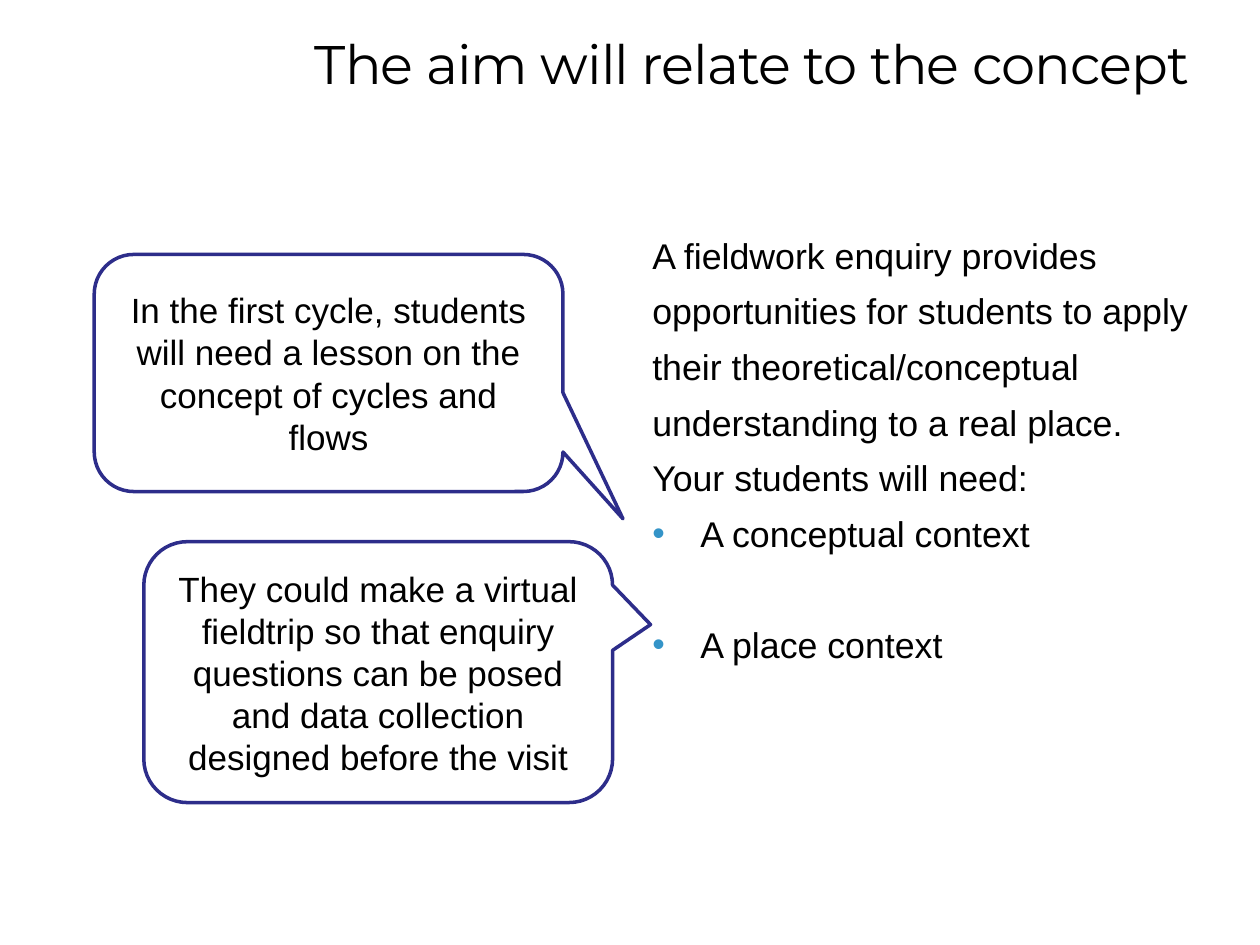
"""Build the slide on linking a fieldwork aim to its concept."""
from dataclasses import dataclass

from lxml.etree import SubElement
from pptx import Presentation
from pptx.dml.color import RGBColor
from pptx.enum.shapes import MSO_SHAPE
from pptx.enum.text import MSO_ANCHOR, PP_ALIGN
from pptx.oxml.ns import qn
from pptx.slide import Slide
from pptx.text.text import TextFrame, _Paragraph
from pptx.util import Cm, Pt

BLACK, WHITE, NAVY, BLUE = "000000", "FFFFFF", "2D2D8A", "3494C8"
TITLE_FORMAT = {"name": "Montserrat", "size": Pt(31)}
BODY_FORMAT = {"name": "Arial", "size": Pt(20.4)}
CALLOUT_FORMAT = {"name": "Arial", "size": Pt(20)}


@dataclass
class Callout:
    """A speech bubble with its position and pointer, lengths in cm."""
    text: str
    left: float
    top: float
    height: float
    pointer: tuple[float, float]
    width: float = 9.45


@dataclass
class Line:
    """A body paragraph."""
    text: str
    bullet: bool = False
    space_before: float = 0


CALLOUTS = [
    Callout("In the first cycle, students will need a lesson on the concept "
            "of cycles and flows", 1.9, 5.13, 4.78, (0.628, 0.615)),
    Callout("They could make a virtual fieldtrip so that enquiry questions can "
            "be posed and data collection designed before the visit",
            2.9, 10.92, 5.26, (0.581, -0.182)),
]
BODY = [
    Line("A fieldwork enquiry provides opportunities for students to apply "
         "their theoretical/conceptual understanding to a real place."),
    Line("Your students will need:"),
    Line("A conceptual context", bullet=True),
    Line("A place context", bullet=True, space_before=31.8),
]


def colour(value: str) -> RGBColor:
    """Turn a hex string into a colour."""
    return RGBColor.from_string(value)


def write(para: _Paragraph, text: str, formats: dict) -> None:
    """Add one formatted black span to a paragraph."""
    span = para.add_run()
    span.text = text
    for name, value in formats.items():
        setattr(span.font, name, value)
    span.font.color.rgb = colour(BLACK)


def add_bullet(para: _Paragraph) -> None:
    """Give a paragraph a hanging coloured bullet."""
    properties = para._p.get_or_add_pPr()
    indent = Cm(0.97)
    properties.set("marL", str(indent))
    properties.set("indent", str(-indent))
    tint = SubElement(properties, qn("a:buClr"))
    SubElement(tint, qn("a:srgbClr"), val=BLUE)
    SubElement(properties, qn("a:buFont"), typeface="Arial")
    SubElement(properties, qn("a:buChar"), char="•")


def add_text_box(page: Slide, left: float, top: float,
                 width: float, height: float) -> TextFrame:
    """Add a wrapping text box, lengths in cm."""
    box = page.shapes.add_textbox(Cm(left), Cm(top), Cm(width), Cm(height))
    box.text_frame.word_wrap = True
    return box.text_frame


def add_title(page: Slide) -> None:
    """Add the tightly spaced title."""
    para = add_text_box(page, 6.1, 0.74, 18.59, 1.32).paragraphs[0]
    para.line_spacing = 0.8
    write(para, "The aim will relate to the concept", TITLE_FORMAT)
    para.runs[0].font._element.set("spc", "-50")


def add_body(page: Slide) -> None:
    """Add the explanation and its bullet list."""
    frame = add_text_box(page, 12.9, 4.32, 11.66, 9.65)
    for index, line in enumerate(BODY):
        para = frame.add_paragraph() if index else frame.paragraphs[0]
        if line.bullet:
            add_bullet(para)
        para.line_spacing = 1.3
        if line.space_before:
            para.space_before = Pt(line.space_before)
        write(para, line.text, BODY_FORMAT)


def add_callout(page: Slide, callout: Callout) -> None:
    """Draw one rounded speech bubble."""
    shape = page.shapes.add_shape(
        MSO_SHAPE.ROUNDED_RECTANGULAR_CALLOUT, Cm(callout.left),
        Cm(callout.top), Cm(callout.width), Cm(callout.height))
    for index, value in enumerate((*callout.pointer, 0.167)):
        shape.adjustments[index] = value
    shape.shadow.inherit = False
    shape.fill.solid()
    shape.fill.fore_color.rgb = colour(WHITE)
    shape.line.color.rgb = colour(NAVY)
    shape.line.width = Pt(2)
    frame = shape.text_frame
    frame.word_wrap = True
    frame.vertical_anchor = MSO_ANCHOR.MIDDLE
    para = frame.paragraphs[0]
    para.alignment = PP_ALIGN.CENTER
    write(para, callout.text, CALLOUT_FORMAT)


def main() -> None:
    """Build and save the deck."""
    deck = Presentation()
    deck.slide_width, deck.slide_height = Cm(25.4), Cm(19.05)
    page = deck.slides.add_slide(deck.slide_layouts[6])
    add_body(page)
    add_title(page)
    for callout in CALLOUTS:
        add_callout(page, callout)
    deck.save("out.pptx")


if __name__ == "__main__":
    main()
